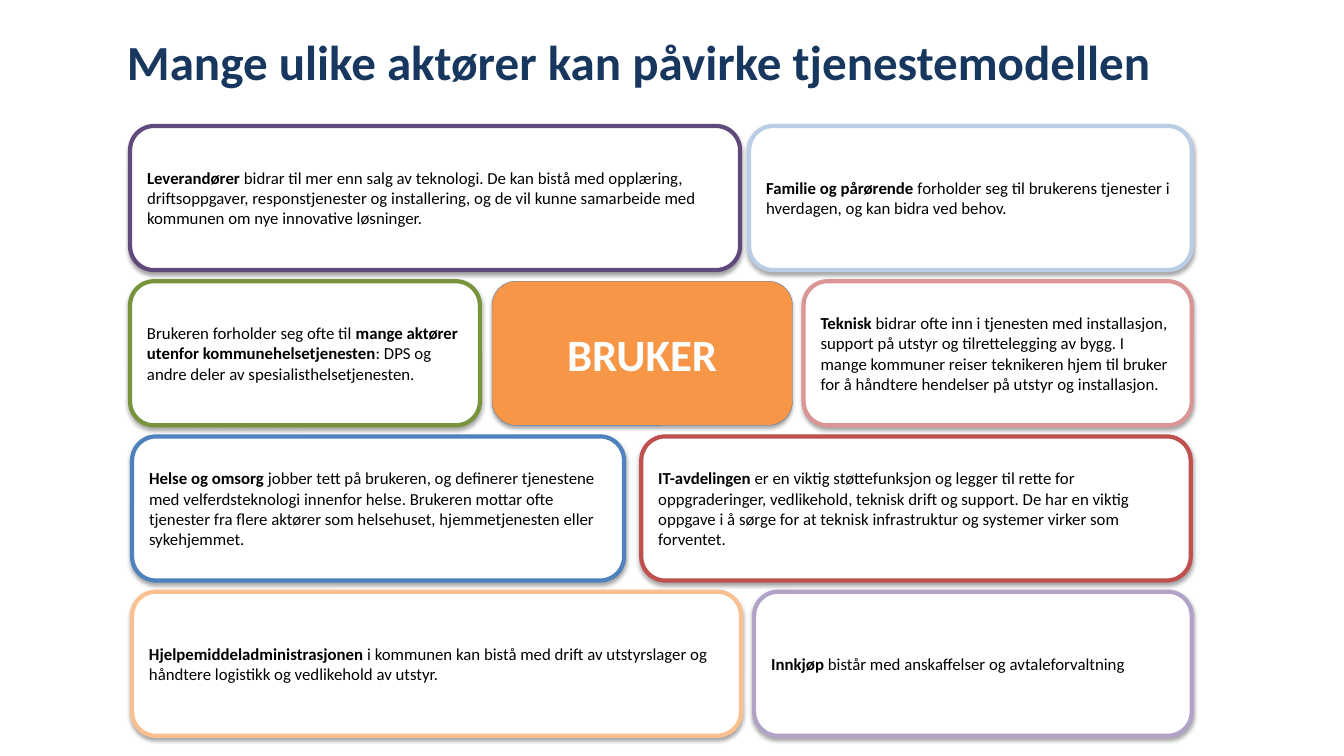
from dataclasses import dataclass

from lxml import etree
from pptx import Presentation
from pptx import util as u
from pptx.dml.color import RGBColor
from pptx.enum import shapes, text
from pptx.oxml import ns


@dataclass(frozen=True)
class Theme:
    face: str = "Calibri"
    navy: str = "17375E"
    ink: str = "000000"
    paper: str = "FFFFFF"
    core: str = "F79646"
    rim: str = "4B7EBC"
    head: float = 35
    hub: float = 32
    body: float = 12
    edge: float = 3
    thin: float = 0.25


LOOK = Theme()
WIDE, HIGH = 13.33, 7.5
TOP, PITCH, TALL = 1.25, 1.54, 1.43

ROWS = [
    [
        (1.29, 6.05, "604A7B", "**Leverandører** bidrar til mer enn salg av teknologi. De kan bistå med opplæring, driftsoppgaver, responstjenester og installering, og de vil kunne samarbeide med kommunen om nye innovative løsninger."),
        (7.43, 4.39, "B9CDE5", "**Familie og pårørende** forholder seg til brukerens tjenester i hverdagen, og kan bidra ved behov."),
    ],
    [
        (1.29, 3.47, "77933C", "Brukeren forholder seg ofte til **mange aktører utenfor kommunehelsetjenesten**: DPS og andre deler av spesialisthelsetjenesten."),
        (7.97, 3.85, "D99694", "**Teknisk** bidrar ofte inn i tjenesten med installasjon, support på utstyr og tilrettelegging av bygg. I mange kommuner reiser teknikeren hjem til bruker for å håndtere hendelser på utstyr og installasjon."),
    ],
    [
        (1.31, 4.88, "4F81BD", "**Helse og omsorg** jobber tett på brukeren, og definerer tjenestene med velferdsteknologi innenfor helse. Brukeren mottar ofte tjenester fra flere aktører som helsehuset, hjemmetjenesten eller sykehjemmet."),
        (6.36, 5.45, "C0504D", "**IT-avdelingen** er en viktig støttefunksjon og legger til rette for oppgraderinger, vedlikehold, teknisk drift og support. De har en viktig oppgave i å sørge for at teknisk infrastruktur og systemer virker som forventet."),
    ],
    [
        (1.31, 6.04, "FAC090", "**Hjelpemiddeladministrasjonen** i kommunen kan bistå med drift av utstyrslager og håndtere logistikk og vedlikehold av utstyr."),
        (7.48, 4.34, "B3A2C7", "**Innkjøp** bistår med anskaffelser og avtaleforvaltning"),
    ],
]


def apply(item, looks):
    for key, value in looks.items():
        setattr(item, key, value)


def write(frame, words, size, color, align=text.PP_ALIGN.LEFT):
    para = frame.paragraphs[0]
    para.alignment = align
    for spot, part in enumerate(words.split("**")):
        if part:
            run = para.add_run()
            run.text = part
            apply(run.font, {"name": LOOK.face, "size": u.Pt(size), "bold": spot % 2 == 1})
            run.font.color.rgb = RGBColor.from_string(color)


def shade(shape):
    shape.shadow.inherit = False
    glow = shape.element.spPr.find(ns.qn("a:effectLst"))
    drop = etree.SubElement(
        glow, ns.qn("a:outerShdw"),
        blurRad=str(u.Pt(3.1)), dist=str(u.Pt(1.8)), dir="5400000", rotWithShape="0",
    )
    tint = etree.SubElement(drop, ns.qn("a:srgbClr"), val=LOOK.ink)
    etree.SubElement(tint, ns.qn("a:alpha"), val="35000")


def card(slide, row, left, width, fill, line, edge):
    box = slide.shapes.add_shape(
        shapes.MSO_SHAPE.ROUNDED_RECTANGLE,
        u.Inches(left), u.Inches(TOP + PITCH * row), u.Inches(width), u.Inches(TALL),
    )
    box.fill.solid()
    box.fill.fore_color.rgb = RGBColor.from_string(fill)
    box.line.color.rgb = RGBColor.from_string(line)
    box.line.width = u.Pt(edge)
    shade(box)
    apply(box.text_frame, {"word_wrap": True, "vertical_anchor": text.MSO_ANCHOR.MIDDLE})
    return box.text_frame


def title(slide, words):
    box = slide.shapes.add_textbox(u.Inches(1.26), u.Inches(0.31), u.Inches(11.66), u.Inches(1.27))
    sides = ("left", "top", "right", "bottom")
    apply(box.text_frame, {"word_wrap": True, **{f"margin_{side}": 0 for side in sides}})
    write(box.text_frame, f"**{words}**", LOOK.head, LOOK.navy)


def main():
    deck = Presentation()
    apply(deck, {"slide_width": u.Inches(WIDE), "slide_height": u.Inches(HIGH)})
    slide = deck.slides.add_slide(deck.slide_layouts[6])
    title(slide, "Mange ulike aktører kan påvirke tjenestemodellen")
    for row, cards in enumerate(ROWS):
        for left, width, line, words in cards:
            frame = card(slide, row, left, width, LOOK.paper, line, LOOK.edge)
            write(frame, words, LOOK.body, LOOK.ink)
    hub = card(slide, 1, 4.88, 2.98, LOOK.core, LOOK.rim, LOOK.thin)
    write(hub, "**BRUKER**", LOOK.hub, LOOK.paper, text.PP_ALIGN.CENTER)
    deck.save("out.pptx")


if __name__ == "__main__":
    main()
